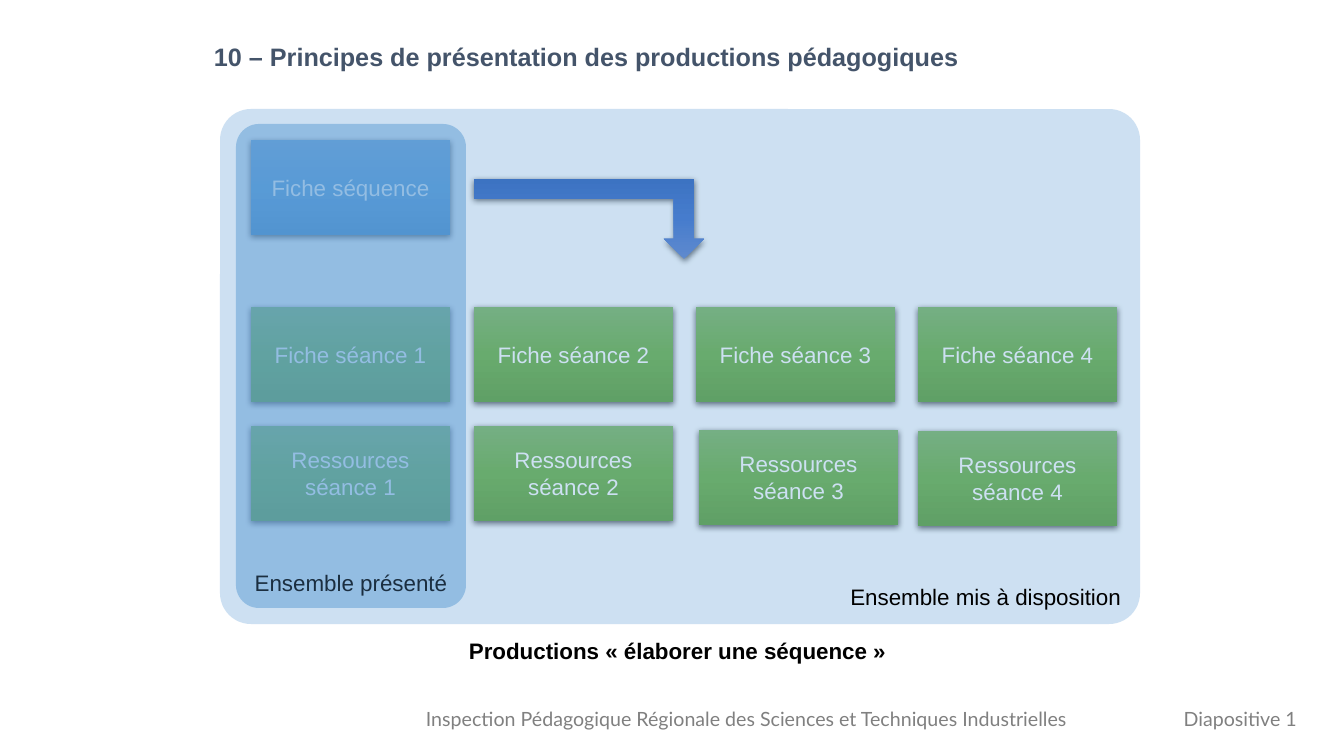
from dataclasses import dataclass

import pptx
import pptx.dml.color
import pptx.enum.shapes
import pptx.enum.text
import pptx.oxml
import pptx.oxml.ns
import pptx.presentation
import pptx.shapes.autoshape
import pptx.slide
import pptx.util

Shape = pptx.shapes.autoshape.Shape
Slide = pptx.slide.Slide
Kind = pptx.enum.shapes.MSO_SHAPE
Align = pptx.enum.text.PP_ALIGN
Anchor = pptx.enum.text.MSO_ANCHOR
SCALE = 914400 / 100.8


@dataclass(frozen=True)
class Theme:
    ink: str = "000000"
    white: str = "FFFFFF"
    title: str = "44546A"
    muted: str = "808080"
    panel: str = "5B9BD5"
    blue: tuple[str, ...] = ("71A6DB", "559BDB", "448ACA")
    green: tuple[str, ...] = ("81B861", "6FB242", "62A336")
    arrow: tuple[str, ...] = ("6183CB", "3E70CA", "3062BB")
    body: str = "Arial"
    foot: str = "Lato"
    large: int = 18
    mid: int = 16
    small: int = 14


THEME = Theme()


@dataclass(frozen=True)
class Area:
    left: int
    top: int
    width: int
    height: int

    def emu(self) -> tuple[int, ...]:
        sides = (self.left, self.top, self.width, self.height)
        return tuple(round(side * SCALE) for side in sides)


@dataclass(frozen=True)
class Label:
    text: str
    area: Area
    size: int = THEME.mid
    color: str = THEME.ink
    font: str = THEME.body
    bold: bool = False
    align: Align = Align.LEFT


@dataclass(frozen=True)
class Card:
    text: str
    left: int
    top: int
    stops: tuple[str, ...] = THEME.green


@dataclass(frozen=True)
class Panel:
    text: str
    area: Area
    round: float
    alpha: int
    align: Align


def write(frame: pptx.text.text.TextFrame, label: Label) -> None:
    line = frame.paragraphs[0]
    line.alignment = label.align
    run = line.add_run()
    run.text = label.text
    run.font.name = label.font
    run.font.size = pptx.util.Pt(label.size)
    run.font.bold = label.bold
    run.font.color.rgb = pptx.dml.color.RGBColor.from_string(label.color)


def add_label(slide: Slide, label: Label) -> None:
    frame = slide.shapes.add_textbox(*label.area.emu()).text_frame
    frame.word_wrap = False
    frame.auto_size = pptx.enum.text.MSO_AUTO_SIZE.SHAPE_TO_FIT_TEXT
    write(frame, label)


def add_glow(slide: Slide, kind: Kind, area: Area, stops: tuple[str, ...]) -> Shape:
    shape = slide.shapes.add_shape(kind, *area.emu())
    space = pptx.oxml.ns.nsdecls("a")
    marks = "".join(
        f'<a:gs pos="{step * 50000}"><a:srgbClr val="{color}"/></a:gs>'
        for step, color in enumerate(stops)
    )
    props = shape.element.spPr
    props.append(pptx.oxml.parse_xml(
        f'<a:gradFill {space} rotWithShape="1"><a:gsLst>{marks}</a:gsLst>'
        '<a:lin ang="5400000" scaled="0"/></a:gradFill>'
    ))
    shape.line.fill.background()
    props.append(pptx.oxml.parse_xml(
        f'<a:effectLst {space}><a:outerShdw blurRad="57150" dist="19050" '
        'dir="5400000" algn="ctr" rotWithShape="0"><a:srgbClr val="000000">'
        '<a:alpha val="63000"/></a:srgbClr></a:outerShdw></a:effectLst>'
    ))
    return shape


def add_card(slide: Slide, card: Card) -> None:
    area = Area(card.left, card.top, 199, 95)
    frame = add_glow(slide, Kind.RECTANGLE, area, card.stops).text_frame
    frame.word_wrap = True
    frame.vertical_anchor = Anchor.MIDDLE
    write(frame, Label(card.text, area, color=THEME.white, align=Align.CENTER))


def add_arrow(slide: Slide, area: Area) -> None:
    arrow = add_glow(slide, Kind.BENT_UP_ARROW, area, THEME.arrow)
    arrow.element.spPr.xfrm.set("flipV", "1")


def add_panel(slide: Slide, panel: Panel) -> None:
    shape = slide.shapes.add_shape(Kind.ROUNDED_RECTANGLE, *panel.area.emu())
    shape.adjustments[0] = panel.round
    shape.shadow.inherit = False
    shape.line.fill.background()
    shape.fill.solid()
    shape.fill.fore_color.rgb = pptx.dml.color.RGBColor.from_string(THEME.panel)
    tint = shape.element.spPr.find(".//" + pptx.oxml.ns.qn("a:srgbClr"))
    tint.append(pptx.oxml.parse_xml(
        f'<a:alpha {pptx.oxml.ns.nsdecls("a")} val="{panel.alpha * 1000}"/>'
    ))
    frame = shape.text_frame
    frame.word_wrap = True
    frame.vertical_anchor = Anchor.BOTTOM
    write(frame, Label(panel.text, panel.area, align=panel.align))


LABELS = (
    Label("Inspection Pédagogique Régionale des Sciences et Techniques Industrielles",
          Area(416, 702, 678, 34), THEME.small, THEME.muted, THEME.foot),
    Label("Diapositive 1", Area(1150, 702, 157, 34), THEME.small, THEME.muted,
          THEME.foot, align=Align.RIGHT),
    Label("10 – Principes de présentation des productions pédagogiques",
          Area(204, 36, 772, 40), THEME.large, THEME.title, bold=True),
    Label("Productions « élaborer une séquence »",
          Area(459, 632, 443, 37), bold=True),
)
COLS = (251, 474, 696, 918)
SHEETS = tuple(
    Card(f"Fiche séance {num}", left, 307) for num, left in enumerate(COLS, 1)
)
STOCK = tuple(
    Card(f"Ressources séance {num}", left, top)
    for num, (left, top) in enumerate(
        ((COLS[0], 426), (COLS[1], 426), (699, 430), (COLS[3], 431)), 1)
)
CARDS = (Card("Fiche séquence", COLS[0], 140, THEME.blue), *SHEETS, *STOCK)
PANELS = (
    Panel("Ensemble présenté", Area(236, 124, 230, 484), 0.1, 50, Align.CENTER),
    Panel("Ensemble mis à disposition", Area(220, 109, 920, 515), 0.06, 30,
          Align.RIGHT),
)


def main() -> None:
    deck = pptx.Presentation()
    deck.slide_width = round(1344 * SCALE)
    deck.slide_height = round(756 * SCALE)
    slide = deck.slides.add_slide(deck.slide_layouts[6])
    for label in LABELS:
        add_label(slide, label)
    for card in CARDS:
        add_card(slide, card)
    add_arrow(slide, Area(474, 179, 230, 80))
    for panel in PANELS:
        add_panel(slide, panel)
    deck.save("out.pptx")


if __name__ == "__main__":
    main()
